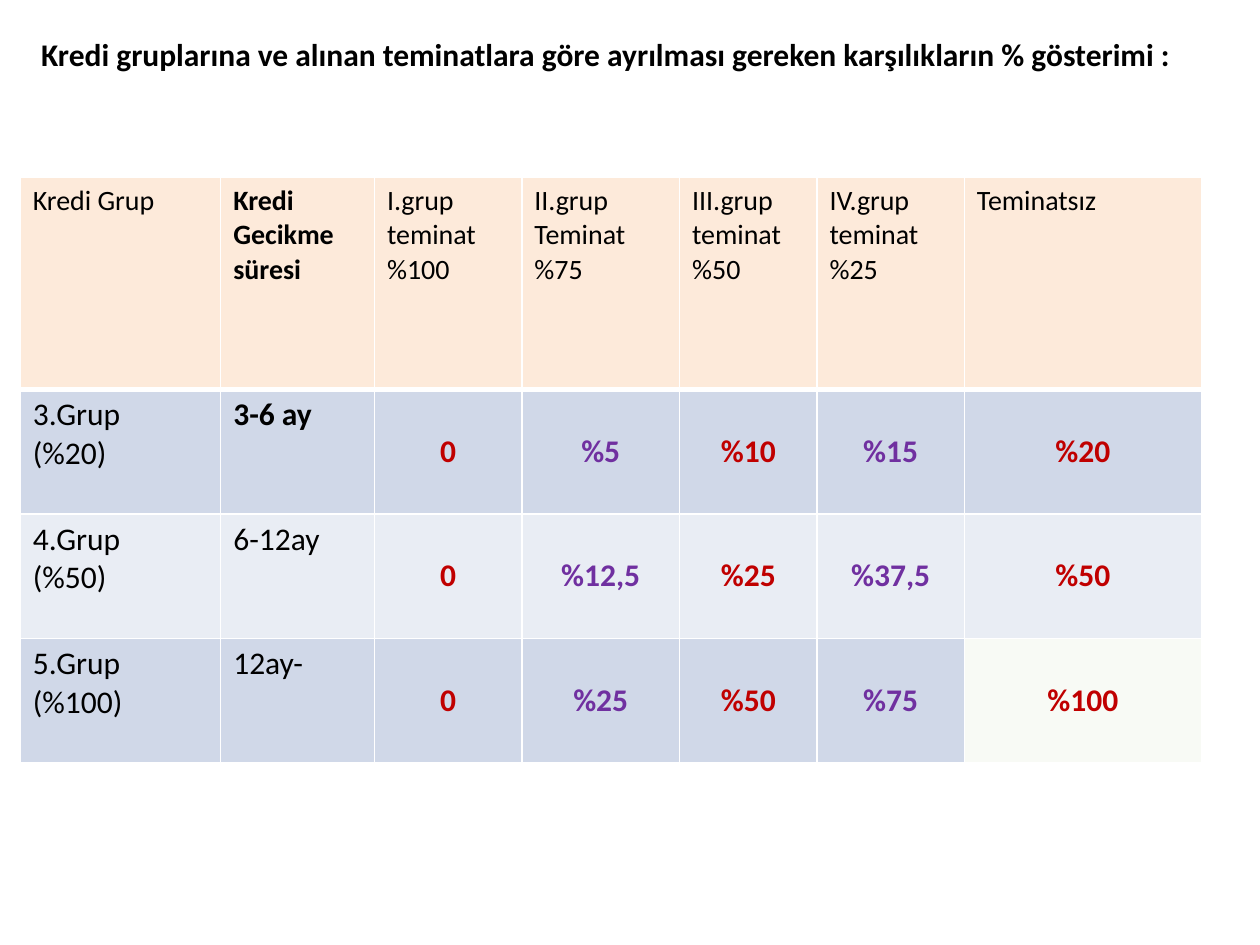
from lxml.etree import SubElement as Sub
from pptx import Presentation
from pptx.dml.color import RGBColor
from pptx.enum.text import MSO_ANCHOR as Anchor, PP_ALIGN as Align
from pptx.oxml.ns import qn
from pptx.util import Cm, Pt

FONT = "Calibri"
BLACK, WHITE, RED, PURPLE = "000000", "FFFFFF", "C00000", "7030A0"
PEACH, MINT = "FDEADA", "EBF1DE"
BANDS = ["D0D8E8", "E9EDF4"]

TITLE = ("Kredi gruplarına ve alınan teminatlara göre ayrılması "
         "gereken karşılıkların % gösterimi :")
WIDTHS = [4.04, 3.1, 2.97, 3.18, 2.77, 2.97, 4.78]
HEIGHTS = [4.27, 2.51, 2.51, 2.51]
ROWS = [
    ["Kredi Grup", "Kredi \nGecikme \nsüresi", "I.grup teminat\n%100",
     "II.grup\nTeminat\n%75", "III.grup teminat\n%50",
     "IV.grup teminat\n%25", "Teminatsız"],
    ["3.Grup\n(%20)", "3-6 ay", "0", "%5", "%10", "%15", "%20"],
    ["4.Grup\n(%50)", "6-12ay", "0", "%12,5", "%25", "%37,5", "%50"],
    ["5.Grup\n(%100)", "12ay-", "0", "%25", "%50", "%75", "%100"],
]


def rgb(code):
    return RGBColor.from_string(code)


def write(frame, text, size, color=BLACK, bold=False, align=Align.LEFT):
    frame.text = text
    for para in frame.paragraphs:
        para.alignment = align
        font = para.font
        font.name, font.size, font.bold = FONT, Pt(size), bold
        font.color.rgb = rgb(color)


def paint(cell, color, alpha=None):
    cell.fill.solid()
    cell.fill.fore_color.rgb = rgb(color)
    if alpha is not None:
        tint = cell.fill.fore_color._xFill.find(qn("a:srgbClr"))
        Sub(tint, qn("a:alpha"), val=str(alpha * 1000))


def border(cell, base):
    """Draw white edges; base is the width of the bottom one in points."""
    props = cell._tc.get_or_add_tcPr()
    for spot, (side, width) in enumerate(
            [("L", 1), ("R", 1), ("T", 1), ("B", base)]):
        line = Sub(props, qn("a:ln" + side), w=str(Pt(width)))
        Sub(Sub(line, qn("a:solidFill")), qn("a:srgbClr"), val=WHITE)
        props.insert(spot, line)


def add_title(slide):
    box = slide.shapes.add_textbox(Cm(0.58), Cm(0.58), Cm(23.83), Cm(1.02))
    box.text_frame.word_wrap = True
    write(box.text_frame, TITLE, 18, bold=True)


def add_grid(slide):
    shape = slide.shapes.add_table(
        len(ROWS), len(WIDTHS), Cm(0.41), Cm(3.58),
        Cm(sum(WIDTHS)), Cm(sum(HEIGHTS)))
    table = shape.table
    for col, width in zip(table.columns, WIDTHS):
        col.width = Cm(width)
    for row, height in zip(table.rows, HEIGHTS):
        row.height = Cm(height)

    for r, texts in enumerate(ROWS):
        for c, text in enumerate(texts):
            cell = table.cell(r, c)
            # Rates are centred, in red and purple by turns
            if r and c > 1:
                cell.vertical_anchor = Anchor.MIDDLE
                color = PURPLE if c % 2 else RED
                write(cell.text_frame, text, 18, color, True, Align.CENTER)
            else:
                write(cell.text_frame, text, 18 if r else 16,
                      bold=c == 1 and r < 2)
            paint(cell, BANDS[(r - 1) % 2] if r else PEACH)
            border(cell, 1 if r else 3)

    # The highest rate stands out on a pale ground
    paint(table.cell(len(ROWS) - 1, len(WIDTHS) - 1), MINT, 30)


def main():
    deck = Presentation()
    deck.slide_width, deck.slide_height = Cm(25.4), Cm(19.05)
    slide = deck.slides.add_slide(deck.slide_layouts[6])
    add_grid(slide)
    add_title(slide)
    deck.save("out.pptx")


main()
